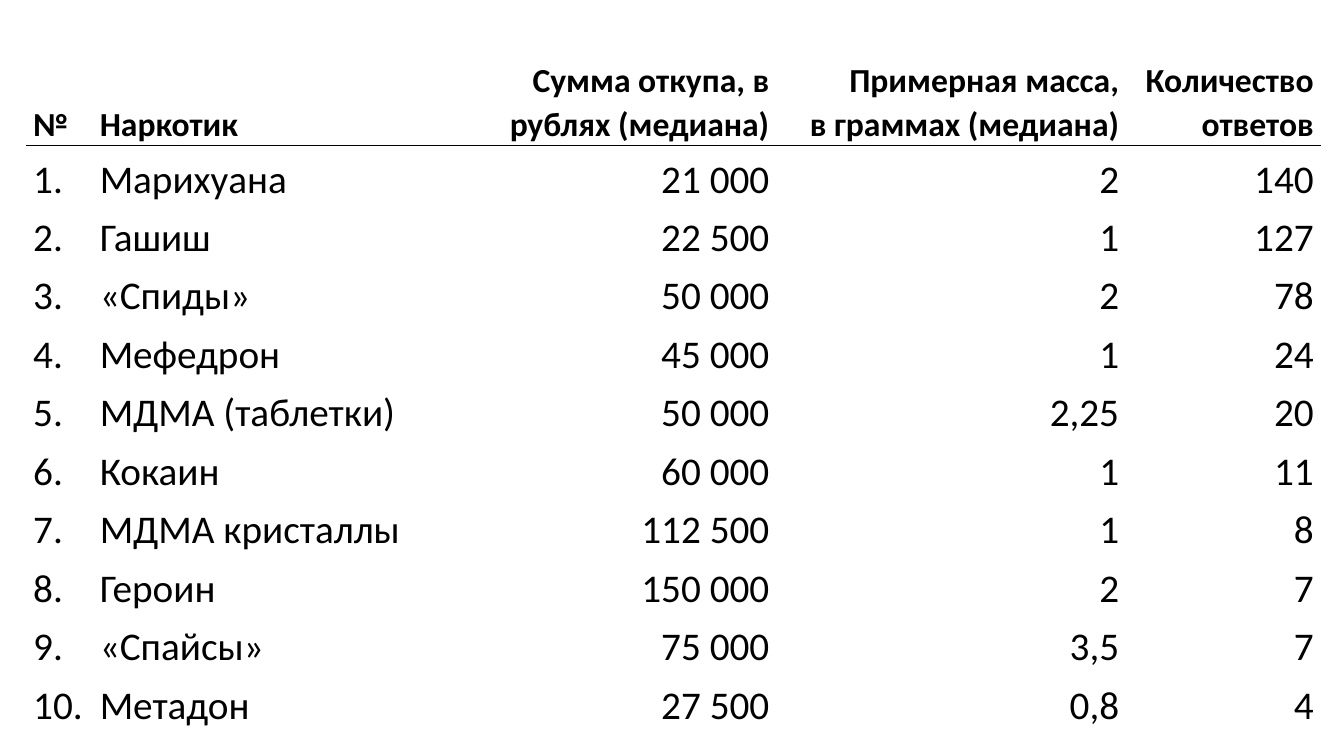
from lxml.etree import SubElement
from pptx import Presentation
from pptx.dml.color import RGBColor
from pptx.enum.text import MSO_ANCHOR, PP_ALIGN
from pptx.oxml.ns import qn
from pptx.util import Inches, Pt

BLACK = RGBColor(0, 0, 0)
FONT = "Calibri"
HEADER_SIZE, BODY_SIZE = 24, 28
LINE_SPACING = 1.07
SIDE_INSET = 0.07

# Table grid, in inches
TABLE_LEFT, TABLE_TOP = 0.26, 0.34
COLUMN_WIDTHS = [0.66, 3.7, 3.08, 3.47, 1.93]
HEADER_HEIGHT, ROW_HEIGHT = 1.1, 0.58
FIRST_NUMERIC_COLUMN = 2

HEADERS = ["№", "Наркотик", "Сумма откупа, в рублях (медиана)",
           "Примерная масса,\nв граммах (медиана)", "Количество ответов"]
ANSWERS = [
    ("Марихуана", "21 000", "2", "140"),
    ("Гашиш", "22 500", "1", "127"),
    ("«Спиды»", "50 000", "2", "78"),
    ("Мефедрон", "45 000", "1", "24"),
    ("МДМА (таблетки)", "50 000", "2,25", "20"),
    ("Кокаин", "60 000", "1", "11"),
    ("МДМА кристаллы", "112 500", "1", "8"),
    ("Героин", "150 000", "2", "7"),
    ("«Спайсы»", "75 000", "3,5", "7"),
    ("Метадон", "27 500", "0,8", "4"),
]


def set_borders(cell, ruled_side):
    """Rule one side of the cell in black and leave the others clear."""
    properties = cell._tc.get_or_add_tcPr()
    for side in ("lnL", "lnR", "lnT", "lnB"):
        line = SubElement(properties, qn(f"a:{side}"), w=str(Pt(1)))
        if side == ruled_side:
            fill = SubElement(line, qn("a:solidFill"))
            SubElement(fill, qn("a:srgbClr"), val=str(BLACK))
        else:
            SubElement(line, qn("a:noFill"))


def write_text(cell, text, size, bold, alignment):
    paragraph = cell.text_frame.paragraphs[0]
    paragraph.alignment = alignment
    paragraph.line_spacing = LINE_SPACING
    for number, part in enumerate(text.split("\n")):
        if number:
            paragraph.add_line_break()
        run = paragraph.add_run()
        run.text = part
        run.font.name = FONT
        run.font.size = Pt(size)
        run.font.bold = bold
        run.font.color.rgb = BLACK


def format_cell(cell, ruled_side):
    cell.vertical_anchor = MSO_ANCHOR.BOTTOM
    cell.margin_left = cell.margin_right = Inches(SIDE_INSET)
    cell.margin_top = cell.margin_bottom = 0
    set_borders(cell, ruled_side)
    cell.fill.background()


def add_answers_table(slide):
    rows = [HEADERS] + [(f"{number}.", *answer)
                        for number, answer in enumerate(ANSWERS, 1)]
    heights = [HEADER_HEIGHT] + [ROW_HEIGHT] * len(ANSWERS)
    table = slide.shapes.add_table(
        len(rows), len(COLUMN_WIDTHS), Inches(TABLE_LEFT), Inches(TABLE_TOP),
        Inches(sum(COLUMN_WIDTHS)), Inches(sum(heights))).table
    table.first_row = table.horz_banding = False

    for column, width in zip(table.columns, COLUMN_WIDTHS):
        column.width = Inches(width)
    for row, height in zip(table.rows, heights):
        row.height = Inches(height)

    # The rule lies between the header and the first answer
    ruled_sides = {0: "lnB", 1: "lnT"}
    for row_index, texts in enumerate(rows):
        is_header = row_index == 0
        size = HEADER_SIZE if is_header else BODY_SIZE
        for column_index, text in enumerate(texts):
            numeric = column_index >= FIRST_NUMERIC_COLUMN
            alignment = PP_ALIGN.RIGHT if numeric else PP_ALIGN.LEFT
            cell = table.cell(row_index, column_index)
            format_cell(cell, ruled_sides.get(row_index))
            write_text(cell, text, size, is_header, alignment)


def main():
    presentation = Presentation()
    presentation.slide_width = Inches(13.33)
    presentation.slide_height = Inches(7.5)
    slide = presentation.slides.add_slide(presentation.slide_layouts[6])
    add_answers_table(slide)
    presentation.save("out.pptx")


if __name__ == "__main__":
    main()
